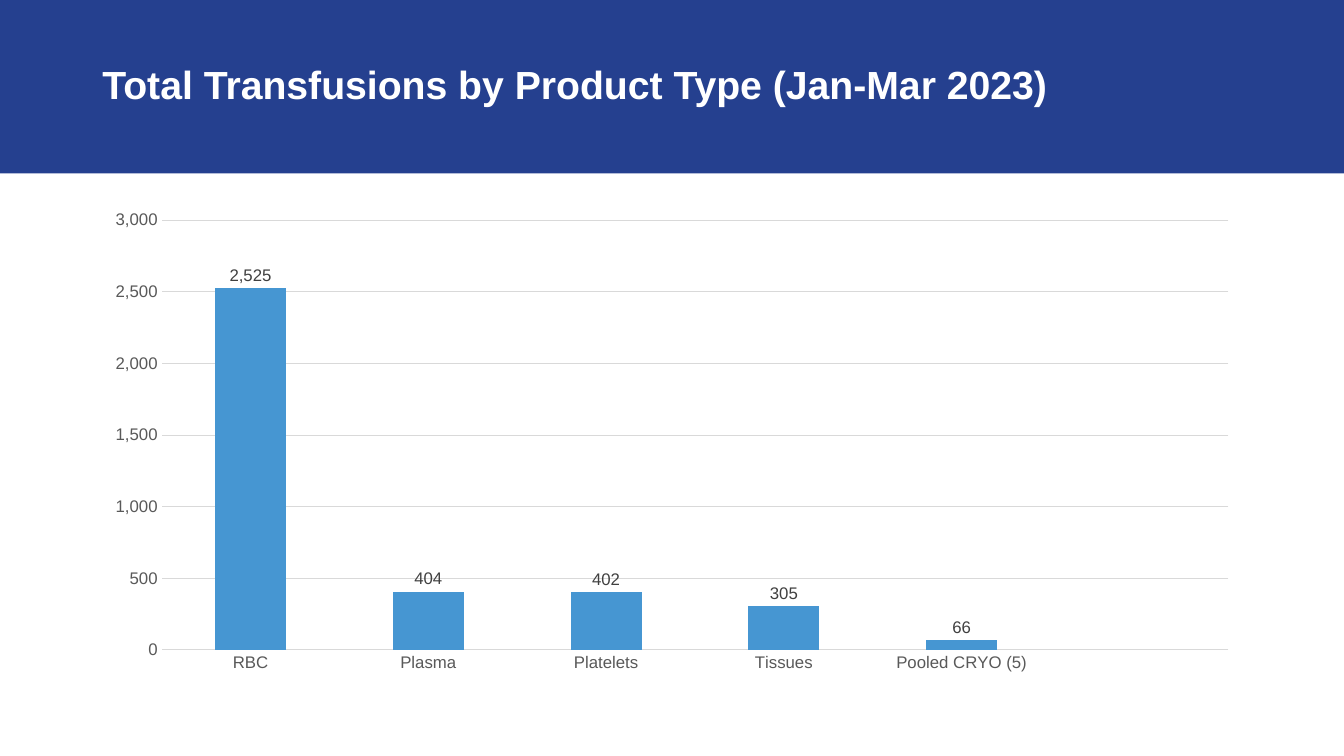
from pptx import Presentation
from pptx.chart.data import CategoryChartData
from pptx.dml.color import RGBColor
from pptx.enum.chart import XL_CHART_TYPE, XL_LABEL_POSITION, XL_TICK_MARK
from pptx.enum.shapes import MSO_SHAPE
from pptx.enum.text import MSO_ANCHOR
from pptx.util import Cm, Pt

FONT = "Arial"
COLORS = {
    "band": "25408F",
    "title": "FFFFFF",
    "bar": "4696D2",
    "axis": "595959",
    "label": "404040",
    "grid": "D9D9D9",
}
# The blank last category keeps an empty slot at the right
TRANSFUSIONS = {
    "RBC": 2525,
    "Plasma": 404,
    "Platelets": 402,
    "Tissues": 305,
    "Pooled CRYO (5)": 66,
    "": None,
}
SLIDE_W, SLIDE_H = Cm(33.87), Cm(19.05)
BAND_H = Cm(4.37)
MARGIN = Cm(2.33)


def color(name):
    return RGBColor.from_string(COLORS[name])


def style_font(font, size, name, bold=False):
    font.name = FONT
    font.size = Pt(size)
    font.bold = bold
    font.color.rgb = color(name)


def add_header(s, left, top, width, height, text):
    # Band
    sp = s.shapes.add_shape(MSO_SHAPE.RECTANGLE, left, top, width, height)
    sp.shadow.inherit = False
    sp.fill.solid()
    sp.fill.fore_color.rgb = color("band")
    sp.line.fill.background()

    # Title
    inset = Cm(0.35)
    tb = s.shapes.add_textbox(left + MARGIN, top + inset,
                              width - 2 * MARGIN, height - 2 * inset)
    tf = tb.text_frame
    tf.word_wrap = True
    tf.vertical_anchor = MSO_ANCHOR.MIDDLE
    tf.text = text
    p = tf.paragraphs[0]
    p.line_spacing = 0.9
    style_font(p.runs[0].font, 28, "title", bold=True)


def add_transfusion_chart(s, left, top, width, height):
    data = CategoryChartData(number_format="#,##0")
    data.categories = list(TRANSFUSIONS)
    data.add_series("Series 1", list(TRANSFUSIONS.values()))
    chart = s.shapes.add_chart(XL_CHART_TYPE.COLUMN_CLUSTERED,
                               left, top, width, height, data).chart
    chart.has_legend = False
    chart.has_title = False
    chart.font.name = FONT
    chart.font.size = Pt(10)

    # Axes
    for axis in (chart.category_axis, chart.value_axis):
        axis.major_tick_mark = XL_TICK_MARK.NONE
        axis.minor_tick_mark = XL_TICK_MARK.NONE
        axis.format.line.fill.background()
        style_font(axis.tick_labels.font, 12, "axis")
    axis = chart.value_axis
    axis.minimum_scale, axis.maximum_scale, axis.major_unit = 0, 3000, 500
    axis.tick_labels.number_format = "#,##0"
    axis.tick_labels.number_format_is_linked = False
    axis.has_major_gridlines = True
    grid = axis.major_gridlines.format.line
    grid.color.rgb = color("grid")
    grid.width = Pt(0.75)

    # Bars and their values
    plot = chart.plots[0]
    plot.vary_by_categories = False
    plot.gap_width = 150
    series = plot.series[0]
    series.format.fill.solid()
    series.format.fill.fore_color.rgb = color("bar")
    labels = series.data_labels
    labels.show_value = True
    labels.number_format = "#,##0"
    labels.number_format_is_linked = False
    labels.position = XL_LABEL_POSITION.OUTSIDE_END
    style_font(labels.font, 12, "label")


def main():
    prs = Presentation()
    prs.slide_width, prs.slide_height = SLIDE_W, SLIDE_H
    s = prs.slides.add_slide(prs.slide_layouts[6])
    add_header(s, 0, 0, SLIDE_W, BAND_H,
               "Total Transfusions by Product Type (Jan-Mar 2023)")
    add_transfusion_chart(s, MARGIN, Cm(5.08), SLIDE_W - 2 * MARGIN, Cm(12.09))
    prs.save("out.pptx")


if __name__ == "__main__":
    main()
